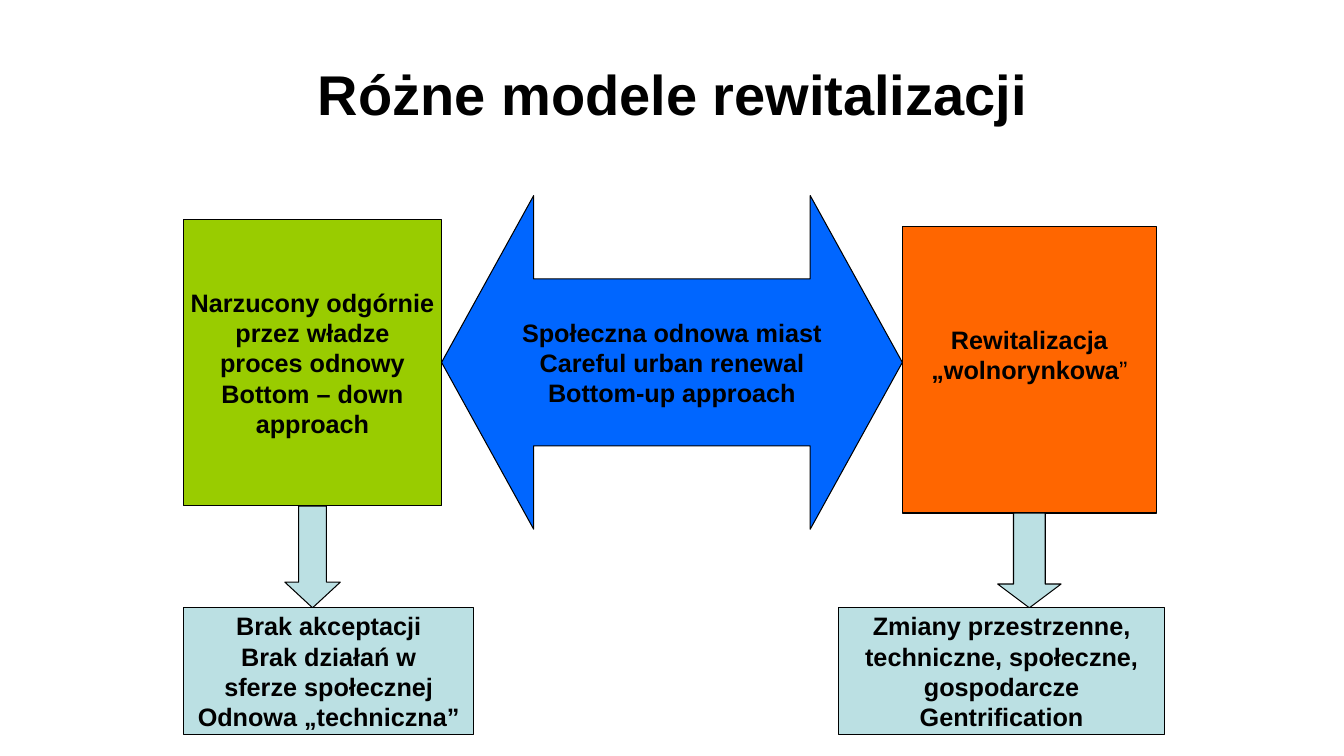
from pptx import Presentation
from pptx.dml.color import RGBColor
from pptx.enum.shapes import MSO_SHAPE
from pptx.enum.text import MSO_ANCHOR, PP_ALIGN
from pptx.util import Inches, Pt

BLACK, BLUE, GREEN, ORANGE, PALE = "000000", "0066FF", "99CC00", "FF6600", "BBE0E3"
OUTCOME_TOP, OUTCOME_HEIGHT = 6.03, 1.26


def color(hex_code):
    return RGBColor.from_string(hex_code)


def write_text(shape, lines, size, wrap=False):
    """Write centred bold lines in the middle of a shape."""
    frame = shape.text_frame
    frame.text = "\n".join(lines)
    frame.word_wrap = wrap
    frame.vertical_anchor = MSO_ANCHOR.MIDDLE
    for paragraph in frame.paragraphs:
        paragraph.alignment = PP_ALIGN.CENTER
        for run in paragraph.runs:
            run.font.name = "Arial"
            run.font.size = Pt(size)
            run.font.bold = True
            run.font.color.rgb = color(BLACK)


def add_block(slide, preset, box, fill, lines=(), adjustments=()):
    """Add an outlined preset shape; box is left, top, width, height."""
    shape = slide.shapes.add_shape(preset, *(Inches(value) for value in box))
    shape.shadow.inherit = False
    shape.fill.solid()
    shape.fill.fore_color.rgb = color(fill)
    shape.line.color.rgb = color(BLACK)
    shape.line.width = Pt(0.75)
    for index, value in enumerate(adjustments):
        shape.adjustments[index] = value
    if lines:
        write_text(shape, lines, 18)
    return shape


def add_title(slide, box, text):
    title = slide.shapes.add_textbox(*(Inches(value) for value in box))
    write_text(title, [text], 40, wrap=True)


def add_model(slide, box, fill, lines, arrow_width, arrow_head, outcome_left, outcome_width, outcome):
    """Add a model box with an arrow down to its outcome."""
    left, top, width, height = box
    model = add_block(slide, MSO_SHAPE.RECTANGLE, box, fill, lines)

    # Arrow centred under the model
    bottom = top + height
    arrow_box = (left + (width - arrow_width) / 2, bottom, arrow_width, OUTCOME_TOP - bottom)
    add_block(slide, MSO_SHAPE.DOWN_ARROW, arrow_box, PALE, adjustments=(0.5, arrow_head))

    # Outcome
    outcome_box = (outcome_left, OUTCOME_TOP, outcome_width, OUTCOME_HEIGHT)
    add_block(slide, MSO_SHAPE.RECTANGLE, outcome_box, PALE, outcome)
    return model


def main():
    presentation = Presentation()
    presentation.slide_width = Inches(13.33)
    presentation.slide_height = Inches(7.5)
    slide = presentation.slides.add_slide(presentation.slide_layouts[6])

    add_title(slide, (0.67, 0.3, 12, 1.25), "Różne modele rewitalizacji")

    # Middle way between the two models
    add_block(slide, MSO_SHAPE.LEFT_RIGHT_ARROW, (4.38, 1.94, 4.57, 3.31), BLUE,
              ["Społeczna odnowa miast", "Careful urban renewal", "Bottom-up approach"],
              (0.5, 0.276))

    # Top-down model
    add_model(slide, (1.82, 2.18, 2.56, 2.84), GREEN,
              ["Narzucony odgórnie", "przez władze", "proces odnowy", "Bottom – down", "approach"],
              0.55, 0.463, 1.82, 2.88,
              ["Brak akceptacji", "Brak działań w", "sferze społecznej", "Odnowa „techniczna”"])

    # Free-market model, with its text raised and the closing quote mark not bold
    market = add_model(slide, (8.95, 2.25, 2.52, 2.84), ORANGE,
                       ["Rewitalizacja", "„wolnorynkowa"],
                       0.63, 0.375, 8.32, 3.23,
                       ["Zmiany przestrzenne,", "techniczne, społeczne,", "gospodarcze", "Gentrification"])
    market.text_frame.margin_bottom = Inches(0.35)
    quote = market.text_frame.paragraphs[-1].add_run()
    quote.text = "”"
    quote.font.name = "Arial"
    quote.font.size = Pt(18)
    quote.font.bold = False
    quote.font.color.rgb = color(BLACK)

    presentation.save("out.pptx")


if __name__ == "__main__":
    main()
